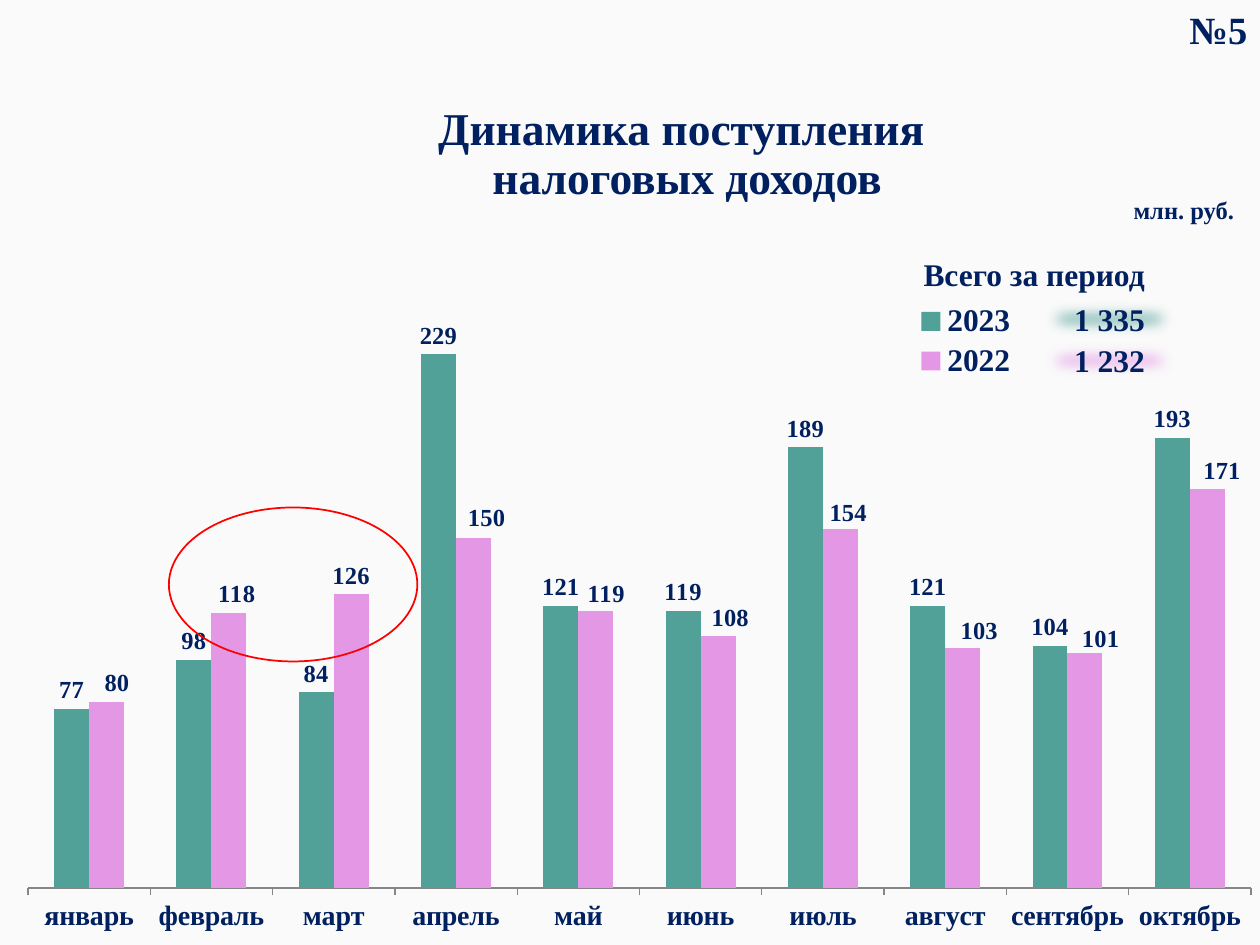
from lxml import etree
from pptx import Presentation
from pptx.chart.data import CategoryChartData
from pptx.dml.color import RGBColor
from pptx.enum import chart as ch, shapes, text
from pptx.oxml import ns
from pptx.util import Pt

NAVY = RGBColor(0x00, 0x20, 0x60)
TEAL = RGBColor(0x51, 0xA1, 0x99)
PINK = RGBColor(0xE3, 0x97, 0xE5)
RED = RGBColor(0xFF, 0x00, 0x00)
GREY = RGBColor(0x86, 0x86, 0x86)
PAPER = RGBColor(0xFA, 0xFA, 0xFA)
FONT = "Times New Roman"

# Content
TITLE = ["Динамика поступления", " налоговых доходов"]
MONTHS = ["январь", "февраль", "март", "апрель", "май",
          "июнь", "июль", "август", "сентябрь", "октябрь"]
SERIES = [
    ("2023", TEAL, [77, 98, 84, 229, 121, 119, 189, 121, 104, 193]),
    ("2022", PINK, [80, 118, 126, 150, 119, 108, 154, 103, 101, 171]),
]
# Label shifts of the 2022 series in points: month index -> (right, down)
SHIFTS = {0: (6, 0), 1: (4.5, 0), 3: (7.5, -1), 4: (6, 1), 5: (7, 0.5),
          6: (4.5, 1.5), 7: (9.5, 1), 8: (9, 3), 9: (8.5, 0)}
# Text, left, top, width, height, size
NOTES = [
    ("млн. руб.", 633, 108, 87, 24.5, 14),
    ("Всего за период", 502.5, 142, 177, 29, 18),
    ("№5", 672.5, 0, 47.5, 34, 22),
]
TOTALS = [("1 232", PINK, 191.5), ("1 335", TEAL, 168)]
CHART = (0, 167, 800, 373)


def set_font(font, size):
    font.name, font.size, font.bold = FONT, Pt(size), True
    font.color.rgb = NAVY


def write(shape, content, size=18, wrap=False, spacing=None,
          anchor=text.MSO_ANCHOR.TOP):
    tf = shape.text_frame
    tf.word_wrap, tf.vertical_anchor = wrap, anchor
    tf.text = content
    for p in tf.paragraphs:
        p.alignment = text.PP_ALIGN.CENTER
        p.line_spacing = spacing
        for r in p.runs:
            set_font(r.font, size)


def place(shape, *box):
    shape.left, shape.top, shape.width, shape.height = map(Pt, box)


def set_layout(parent, index, **values):
    """Give a chart part a manual layout as fractions of the chart."""
    for old in parent.findall(ns.qn("c:layout")):
        parent.remove(old)
    layout = etree.Element(ns.qn("c:layout"))
    manual = etree.SubElement(layout, ns.qn("c:manualLayout"))
    for tag, value in values.items():
        etree.SubElement(manual, ns.qn("c:" + tag)).set("val", str(value))
    parent.insert(index, layout)


prs = Presentation()
prs.slide_width, prs.slide_height = Pt(720), Pt(540)
s = prs.slides.add_slide(prs.slide_layouts[5])
s.background.fill.solid()
s.background.fill.fore_color.rgb = PAPER

# Title
place(s.shapes.title, 88.5, 49, 602, 79)
write(s.shapes.title, "\n".join(TITLE), size=26, wrap=True, spacing=0.9,
      anchor=text.MSO_ANCHOR.MIDDLE)

# Chart
data = CategoryChartData(number_format="0")
data.categories = MONTHS
for name, _, values in SERIES:
    data.add_series(name, values)
chart = s.shapes.add_chart(ch.XL_CHART_TYPE.COLUMN_CLUSTERED,
                           *map(Pt, CHART), data).chart
chart.has_title = False
plot = chart.plots[0]
plot.gap_width, plot.overlap, plot.vary_by_categories = 150, 0, False
for series, (_, color, _) in zip(plot.series, SERIES):
    series.format.fill.solid()
    series.format.fill.fore_color.rgb = color
    labels = series.data_labels
    labels.show_value = True
    labels.number_format, labels.number_format_is_linked = "0", False
    labels.position = ch.XL_LABEL_POSITION.OUTSIDE_END
    set_font(labels.font, 14)

# Shifted labels
second = plot.series[1]
for i, (dx, dy) in SHIFTS.items():
    label = second.points[i].data_label
    set_font(label.font, 14)
    label.position = ch.XL_LABEL_POSITION.OUTSIDE_END
for item in second.data_labels._element.findall(ns.qn("c:dLbl")):
    dx, dy = SHIFTS[int(item.find(ns.qn("c:idx")).get("val"))]
    set_layout(item, 1, x=round(dx / CHART[2], 4), y=round(dy / CHART[3], 4))

# Axes, legend and plot position
axis = chart.category_axis
axis.major_tick_mark = ch.XL_TICK_MARK.OUTSIDE
axis.format.line.color.rgb = GREY
set_font(axis.tick_labels.font, 16)
scale = chart.value_axis
scale.minimum_scale, scale.maximum_scale = 0, 250
scale.has_major_gridlines = scale.visible = False
chart.has_legend = True
legend = chart.legend
legend.position = ch.XL_LEGEND_POSITION.RIGHT
legend.include_in_layout = False
set_font(legend.font, 18)
set_layout(legend._element, 1, xMode="edge", yMode="edge",
           x=0.65, y=0.01, w=0.08, h=0.13)
set_layout(plot._element.getparent(), 0, layoutTarget="inner",
           xMode="edge", yMode="edge", x=0.02, y=0.02, w=0.8736, h=0.893)

# Period totals with soft edges
for content, color, top in TOTALS:
    sp = s.shapes.add_shape(shapes.MSO_SHAPE.RECTANGLE,
                            *map(Pt, (590.5, top, 87, 29)))
    sp.fill.solid()
    sp.fill.fore_color.rgb = color
    sp.line.fill.background()
    sp.shadow.inherit = False
    effects = sp._element.spPr.find(ns.qn("a:effectLst"))
    etree.SubElement(effects, ns.qn("a:softEdge")).set("rad", str(Pt(10)))
    write(sp, content)

# Notes
for content, *box, size in NOTES:
    write(s.shapes.add_textbox(*map(Pt, box)), content, size=size)

# Highlight around February and March
ring = s.shapes.add_shape(shapes.MSO_SHAPE.OVAL,
                          *map(Pt, (96.5, 290, 142, 88)))
ring.fill.background()
ring.line.color.rgb, ring.line.width = RED, Pt(1)
ring.shadow.inherit = False

prs.save("out.pptx")
